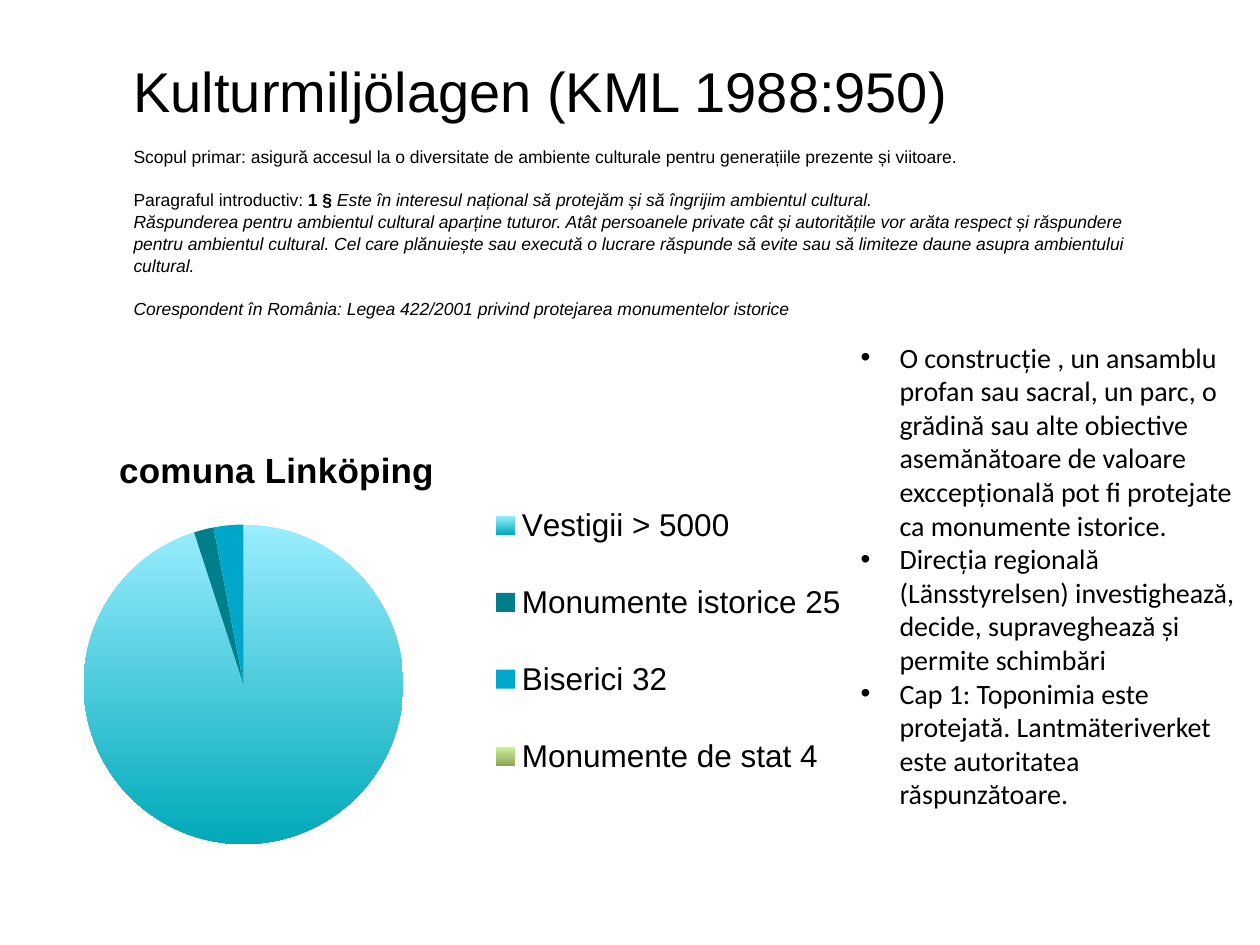
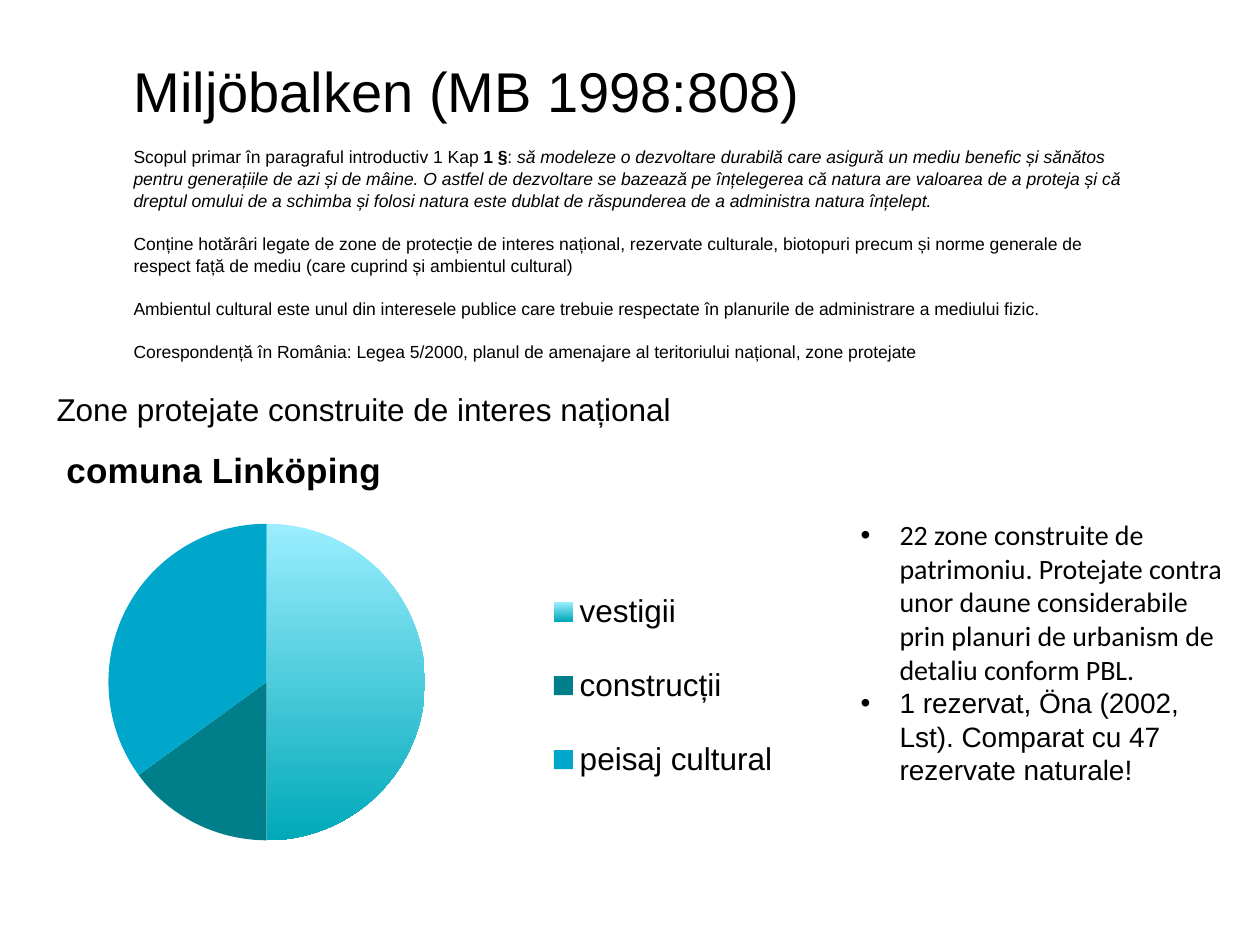
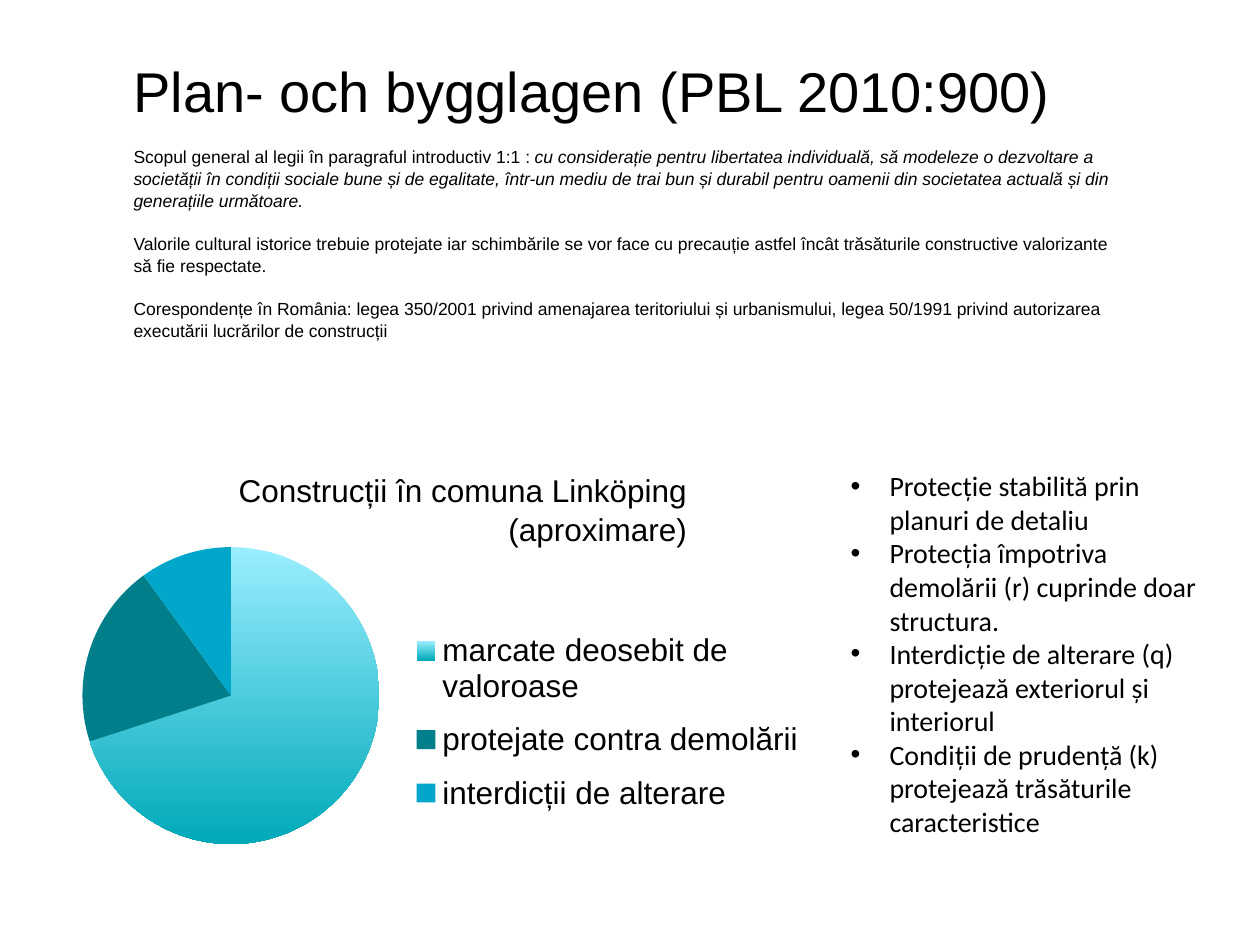
from pptx import Presentation, util as u
from pptx.chart.data import CategoryChartData
from pptx.dml.color import RGBColor
from pptx.enum import chart as ch, text
from pptx.oxml import parse_xml
from pptx.oxml.ns import nsdecls, qn

WIDTH, HEIGHT = u.Inches(10), u.Inches(7.5)
COLUMNS, ROWS = 100, 75
INK = "000000"
HEAD_FONT, LIST_FONT = "Arial", "Calibri"
LEADING = 1.05
LIST_INDENT = u.Inches(0.31)
# A pair is a gradient from top to bottom, a single colour a plain fill
SLICES = [("9AEEFF", "00A9B9"), ("007F8B",), ("00A7CB",), ("D0F09A", "8DA85A")]
PIE_AREA = (0.04, 0.222, 0.481, 0.778)


def color(value):
    return RGBColor.from_string(value)


def cells(box):
    """Turn left, top, width and height in grid cells into lengths."""
    left, top, width, height = box
    col, row = WIDTH / COLUMNS, HEIGHT / ROWS
    return int(left * col), int(top * row), int(width * col), int(height * row)


def place(shape, box):
    shape.left, shape.top, shape.width, shape.height = cells(box)
    frame = shape.text_frame
    frame.word_wrap = True
    frame.auto_size = text.MSO_AUTO_SIZE.NONE
    frame.vertical_anchor = text.MSO_ANCHOR.TOP
    return frame


def style(font, size, name=HEAD_FONT):
    font.size, font.name = u.Pt(size), name
    font.color.rgb = color(INK)


def next_paragraph(frame, index):
    return frame.add_paragraph() if index else frame.paragraphs[0]


def add_law(slide, box, name, summary):
    """Fill the title with the law's name and its summary.

    Each summary paragraph is a space before, then (text, marks) runs,
    where the marks are b for bold and i for italic.
    """
    frame = place(slide.shapes.title, box)
    frame.margin_left = frame.margin_top = frame.margin_right = frame.margin_bottom = 0
    paragraphs = [(0, (name, ""))] + summary
    for index, (gap, *runs) in enumerate(paragraphs):
        paragraph = next_paragraph(frame, index)
        paragraph.alignment = text.PP_ALIGN.LEFT
        paragraph.line_spacing = LEADING
        paragraph.space_before = u.Pt(gap)
        for words, marks in runs:
            run = paragraph.add_run()
            run.text = words
            style(run.font, 10 if index else 32)
            run.font.bold, run.font.italic = "b" in marks, "i" in marks


def add_remarks(slide, box, remarks):
    """Fill the body with bulleted (text, font) remarks."""
    frame = place(slide.placeholders[1], box)
    for index, (words, font_name) in enumerate(remarks):
        paragraph = next_paragraph(frame, index)
        paragraph.text = words
        props = paragraph._p.get_or_add_pPr()
        props.set("marL", str(LIST_INDENT))
        props.set("indent", str(-LIST_INDENT))
        props.append(parse_xml(f'<a:buFont {nsdecls("a")} typeface="Arial"/>'))
        props.append(parse_xml(f'<a:buChar {nsdecls("a")} char="•"/>'))
        paragraph.space_before = u.Pt(0)
        paragraph.line_spacing = u.Pt(19.2)
        style(paragraph.runs[0].font, 16, font_name)


def add_caption(slide, box, lines, align=text.PP_ALIGN.LEFT):
    frame = place(slide.shapes.add_textbox(*cells(box)), box)
    for index, words in enumerate(lines):
        paragraph = next_paragraph(frame, index)
        paragraph.text = words
        paragraph.alignment = align
        paragraph.line_spacing = LEADING
        style(paragraph.runs[0].font, 18)


def set_layout(part, index, shares, inner=False):
    """Pin a chart part at shares (x, y and perhaps w, h) of the chart."""
    for old in part.findall(qn("c:layout")):
        part.remove(old)
    target = '<c:layoutTarget val="inner"/>' if inner else ""
    modes = '<c:xMode val="edge"/><c:yMode val="edge"/>'
    sizes = "".join(f'<c:{key} val="{share}"/>' for key, share in zip("xywh", shares))
    part.insert(index, parse_xml(
        f'<c:layout {nsdecls("c")}><c:manualLayout>{target}{modes}{sizes}'
        "</c:manualLayout></c:layout>"))


def add_pie(slide, box, shares, legend_area, series="Series 1", title=None, title_at=None):
    data = CategoryChartData()
    data.categories = list(shares)
    data.add_series(series, list(shares.values()))
    chart = slide.shapes.add_chart(ch.XL_CHART_TYPE.PIE, *cells(box), data).chart
    style(chart.font, 18)
    pie = chart.plots[0]
    pie.vary_by_categories = True
    set_layout(chart._chartSpace.chart.plotArea, 0, PIE_AREA, inner=True)

    for index, tones in enumerate(SLICES[:len(shares)]):
        fill = pie.series[0].points[index].format.fill
        if len(tones) == 1:
            fill.solid()
            fill.fore_color.rgb = color(tones[0])
            continue
        fill.gradient()
        fill.gradient_angle = 270
        for stop, tone in zip(fill.gradient_stops, tones):
            stop.color.rgb = color(tone)

    chart.has_legend = True
    chart.legend.position = ch.XL_LEGEND_POSITION.RIGHT
    chart.legend.include_in_layout = False
    style(chart.legend.font, 18)
    set_layout(chart.legend._element, 1, legend_area)

    chart.has_title = title is not None
    if title:
        heading = chart.chart_title.text_frame
        heading.text = title
        style(heading.paragraphs[0].runs[0].font, 20)
        heading.paragraphs[0].runs[0].font.bold = True
        set_layout(chart.chart_title._element, 1, title_at)


def heritage_act(slide):
    add_law(slide, (10.6, 4.2, 78.8, 21.5), "Kulturmiljölagen (KML 1988:950)", [
        (12, ("Scopul primar: asigură accesul la o diversitate de ambiente culturale "
              "pentru generațiile prezente și viitoare.", "")),
        (12, ("Paragraful introductiv: ", ""), ("1 § ", "b"),
         ("Este în interesul național să protejăm și să îngrijim ambientul cultural.", "i")),
        (0, ("Răspunderea pentru ambientul cultural aparține tuturor. Atât persoanele private "
             "cât și autoritățile vor arăta respect și răspundere pentru ambientul cultural. "
             "Cel care plănuiește sau execută o lucrare răspunde să evite sau să limiteze "
             "daune asupra ambientului cultural.", "i")),
        (12, ("Corespondent în România: Legea 422/2001 privind protejarea monumentelor "
              "istorice", "i")),
    ])
    add_pie(slide, (0, 34.4, 68.9, 32.6),
            {"Vestigii > 5000": 95, "Monumente istorice 25": 2,
             "Biserici 32": 3, "Monumente de stat 4": 0},
            (0.56, 0.08, 0.42, 0.85), title="comuna Linköping", title_at=(0.13, 0.02))
    add_remarks(slide, (67.3, 26.5, 32.7, 41.7), [
        ("O construcție , un ansamblu profan sau sacral, un parc, o grădină sau alte obiective "
         "asemănătoare de valoare exccepțională pot fi protejate ca monumente istorice.",
         LIST_FONT),
        ("Direcția regională (Länsstyrelsen) investighează, decide, supraveghează și permite "
         "schimbări", LIST_FONT),
        ("Cap 1: Toponimia este protejată. Lantmäteriverket este autoritatea răspunzătoare.",
         LIST_FONT),
    ])


def environmental_code(slide):
    add_law(slide, (10.6, 4.2, 79.5, 24.6), "Miljöbalken (MB 1998:808)", [
        (12, ("Scopul primar în paragraful introductiv 1 Kap ", ""), ("1 §", "b"), (": ", ""),
         ("să modeleze o dezvoltare durabilă care asigură un mediu benefic și sănătos pentru "
          "generațiile de azi și de mâine. O astfel de dezvoltare se bazează pe înțelegerea că "
          "natura are valoarea de a proteja și că dreptul omului de a schimba și folosi natura "
          "este dublat de răspunderea de a administra natura înțelept.", "i")),
        (12, ("Conține hotărâri legate de zone de protecție de interes național, rezervate "
              "culturale, biotopuri precum și norme generale de respect față de mediu (care "
              "cuprind și ambientul cultural)", "")),
        (12, ("Ambientul cultural este unul din interesele publice care trebuie respectate în "
              "planurile de administrare a mediului fizic.", "")),
        (12, ("Corespondență în România: Legea 5/2000, planul de amenajare al teritoriului "
              "național, zone protejate", "")),
    ])
    add_pie(slide, (3.5, 34.4, 63, 32.3),
            {"vestigii": 50, "construcții": 15, "peisaj cultural": 35},
            (0.63, 0.3, 0.3, 0.64), series="comuna Linköping",
            title="comuna Linköping", title_at=(0.02, 0.02))
    add_remarks(slide, (67.3, 40.6, 30.7, 28.3), [
        ("22 zone construite de patrimoniu. Protejate contra unor daune considerabile prin "
         "planuri de urbanism de detaliu conform PBL.", LIST_FONT),
        ("1 rezervat, Öna (2002, Lst). Comparat cu 47 rezervate naturale!", HEAD_FONT),
    ])
    add_caption(slide, (3.5, 30.3, 53.5, 4), ["Zone protejate construite de interes național"])


def planning_act(slide):
    add_law(slide, (10.6, 4.2, 78.8, 22.3), "Plan- och bygglagen (PBL 2010:900)", [
        (12, ("Scopul general al legii în paragraful introductiv 1:1 : ", ""),
         ("cu considerație pentru libertatea individuală, să modeleze o dezvoltare a "
          "societății în condiții sociale bune și de egalitate, într-un mediu de trai bun și "
          "durabil pentru oamenii din societatea actuală și din generațiile următoare.", "i")),
        (12, ("Valorile cultural istorice trebuie protejate iar schimbările se vor face cu "
              "precauție astfel încât trăsăturile constructive valorizante să fie respectate.",
              "")),
        (12, ("Corespondențe în România: legea 350/2001 privind amenajarea teritoriului și "
              "urbanismului, legea 50/1991 privind autorizarea executării lucrărilor de "
              "construcții", "")),
    ])
    add_pie(slide, (0.1, 36.7, 65, 30.3),
            {"marcate deosebit de valoroase": 70, "protejate contra demolării": 20,
             "interdicții de alterare": 10},
            (0.5, 0.4, 0.48, 0.56))
    add_remarks(slide, (66.5, 36.7, 30.7, 30.6), [
        ("Protecție stabilită prin planuri de detaliu", LIST_FONT),
        ("Protecția împotriva demolării (r) cuprinde doar structura.", LIST_FONT),
        ("Interdicție de alterare (q) protejează exteriorul și interiorul", LIST_FONT),
        ("Condiții de prudență (k) protejează trăsăturile caracteristice", LIST_FONT),
    ])
    add_caption(slide, (10.6, 36.7, 44.9, 7.1),
                ["Construcții în comuna Linköping", "(aproximare)"], text.PP_ALIGN.RIGHT)


def main():
    deck = Presentation()
    deck.slide_width, deck.slide_height = WIDTH, HEIGHT
    for build in (heritage_act, environmental_code, planning_act):
        build(deck.slides.add_slide(deck.slide_layouts[1]))
    deck.save("out.pptx")


if __name__ == "__main__":
    main()
